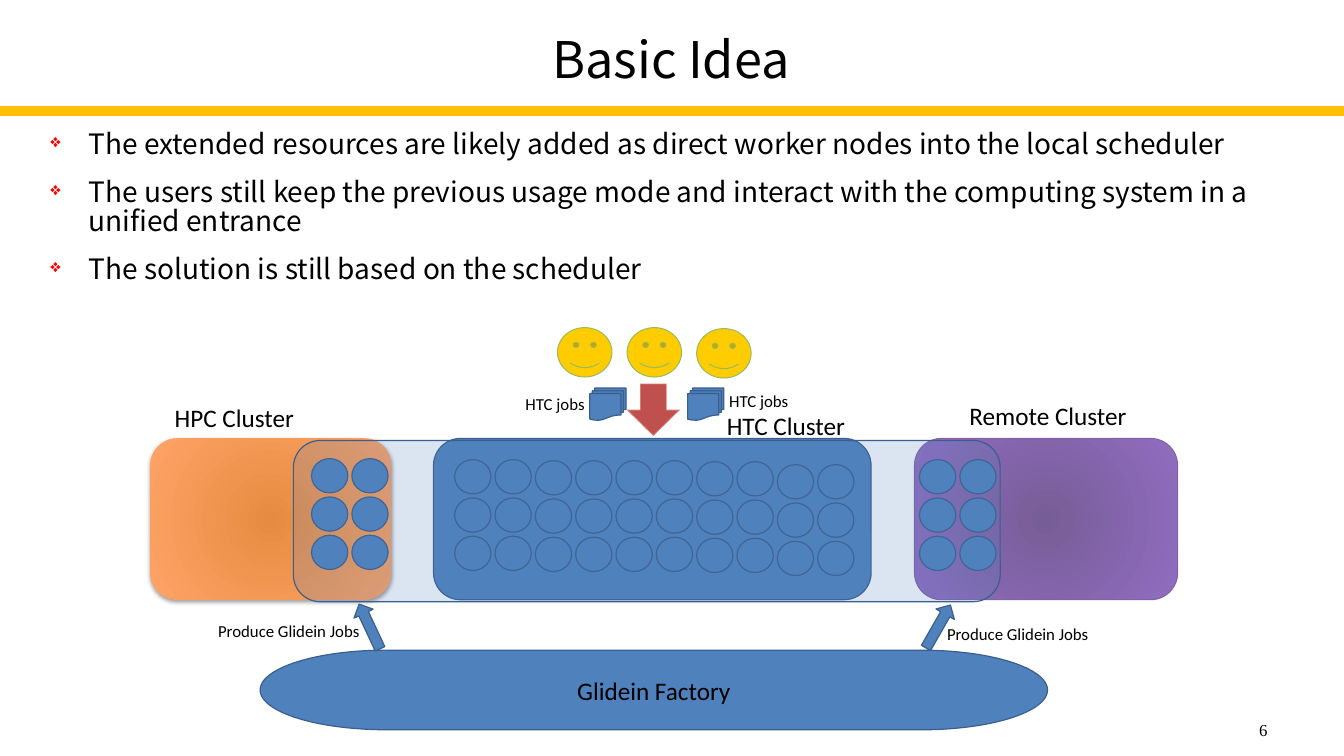
"""Builds the Basic Idea slide on extending a local cluster with glidein jobs."""
import dataclasses

import pptx
import pptx.dml.color
import pptx.enum.shapes
import pptx.enum.text
import pptx.oxml
import pptx.oxml.ns
import pptx.util

Inches = pptx.util.Inches
Pt = pptx.util.Pt
SHAPE = pptx.enum.shapes.MSO_SHAPE
ALIGN = pptx.enum.text.PP_ALIGN
ANCHOR = pptx.enum.text.MSO_ANCHOR


@dataclasses.dataclass(frozen=True)
class Theme:
    ink: str = "000000"
    rule: str = "FFC000"
    bullet: str = "FF0000"
    blue: str = "4F81BD"
    blue_edge: str = "3A5F8C"
    orange: tuple = ("E68C41", "FFA367")
    purple: tuple = ("775D97", "916DC1")
    purple_edge: str = "8064A2"
    face: str = "FFCC00"
    face_edge: str = "9BBB59"
    red: str = "C0504D"
    white: str = "FFFFFF"
    heading_font: str = "Noto Sans CJK SC"
    label_font: str = "Calibri"
    number_font: str = "Times New Roman"
    title_size: int = 36
    body_size: int = 20
    label_size: int = 18
    small_size: int = 12


def color(value):
    return pptx.dml.color.RGBColor.from_string(value)


def add_xml(parent, tag, **attributes):
    child = pptx.oxml.parse_xml(f"<a:{tag} {pptx.oxml.ns.nsdecls('a')}/>")
    for name, value in attributes.items():
        child.set(name, str(value))
    parent.append(child)
    return child


class Painter:
    def __init__(self, page, theme):
        self.page = page
        self.theme = theme

    def style(self, para, size, font, align):
        para.alignment = align
        para.font.size = Pt(size)
        para.font.name = font
        para.font.color.rgb = color(self.theme.ink)

    def text(self, area, words, size, font=None, align=ALIGN.CENTER, anchor=ANCHOR.MIDDLE):
        box = self.page.shapes.add_textbox(*map(Inches, area))
        box.text_frame.word_wrap = True
        box.text_frame.vertical_anchor = anchor
        box.text_frame.text = words
        for para in box.text_frame.paragraphs:
            self.style(para, size, font or self.theme.label_font, align)
        return box

    def bullets(self, area, lines):
        box = self.text(area, "\n".join(lines), self.theme.body_size,
                        self.theme.heading_font, ALIGN.LEFT, ANCHOR.TOP)
        for para in box.text_frame.paragraphs:
            para.space_before = Pt(14.4)
            para.line_spacing = 0.84
            properties = para._p.get_or_add_pPr()
            properties.set("marL", str(Inches(0.38)))
            properties.set("indent", str(Inches(-0.38)))
            defaults = properties.find(pptx.oxml.ns.qn("a:defRPr"))
            add_xml(add_xml(properties, "buClr"), "srgbClr", val=self.theme.bullet)
            add_xml(properties, "buSzPct", val=65000)
            add_xml(properties, "buChar", char="❖")
            properties.append(defaults)

    def shape(self, kind, area, fill=None, edge=None, width=0.85, turn=0):
        shape = self.page.shapes.add_shape(kind, *map(Inches, area))
        shape.shadow.inherit = False
        shape.rotation = turn
        shape.fill.solid()
        shape.fill.fore_color.rgb = color(fill or self.theme.blue)
        shape.line.color.rgb = color(edge or self.theme.blue_edge)
        shape.line.width = Pt(width)
        return shape

    def fade(self, paint, percent):
        paint_color = paint._xPr.find(".//" + pptx.oxml.ns.qn("a:srgbClr"))
        add_xml(paint_color, "alpha", val=percent * 1000)

    def glow(self, shape, colors):
        shape.fill.gradient()
        for stop, position, value in zip(shape.fill.gradient_stops, (0, 1), colors):
            stop.position = position
            stop.color.rgb = color(value)
        gradient = shape._element.spPr.find(pptx.oxml.ns.qn("a:gradFill"))
        gradient.remove(gradient.find(pptx.oxml.ns.qn("a:lin")))
        center = dict.fromkeys("ltrb", 50000)
        add_xml(add_xml(gradient, "path", path="circle"), "fillToRect", **center)

    def drop_shadow(self, shape):
        effects = shape._element.spPr.find(pptx.oxml.ns.qn("a:effectLst"))
        shadow = add_xml(effects, "outerShdw", blurRad=Pt(3.5), dist=Pt(1.7),
                         dir=90 * 60000, rotWithShape=0)
        add_xml(add_xml(shadow, "srgbClr", val=self.theme.ink), "alpha", val=40000)

    def rule(self, left, right, top):
        line = self.page.shapes.add_connector(
            pptx.enum.shapes.MSO_CONNECTOR.STRAIGHT,
            *map(Inches, (left, top, right, top)))
        line.line.color.rgb = color(self.theme.rule)
        line.line.width = Pt(7)
        add_xml(line._element.spPr, "effectLst")

    def nodes(self, left, top):
        for column in range(2):
            for row in range(3):
                self.shape(SHAPE.OVAL, (left + 0.4 * column, top + 0.38 * row, 0.36, 0.34))


def draw_header(painter):
    theme = painter.theme
    painter.rule(0, 13.33, 1.1)
    painter.text((0.4, 0.26, 12.51, 0.63), "Basic Idea", theme.title_size, theme.heading_font)
    painter.bullets((0.4, 1.26, 12.51, 5.47), (
        "The extended resources are likely added as direct worker nodes into the local scheduler",
        "The users still keep the previous usage mode and interact with the computing system"
        " in a unified entrance",
        "The solution is still based on the scheduler"))
    painter.text((9.56, 6.89, 3.11, 0.5), "6", theme.small_size, theme.number_font,
                 ALIGN.RIGHT, ANCHOR.BOTTOM)


def draw_clusters(painter):
    theme = painter.theme
    hpc = painter.shape(SHAPE.ROUNDED_RECTANGLE, (1.49, 4.35, 2.39, 1.6))
    hpc.line.fill.background()
    painter.glow(hpc, theme.orange)
    painter.drop_shadow(hpc)
    painter.shape(SHAPE.ROUNDED_RECTANGLE, (4.3, 4.35, 4.34, 1.6))
    remote = painter.shape(SHAPE.ROUNDED_RECTANGLE, (9.07, 4.35, 2.61, 1.6),
                           edge=theme.purple_edge, width=0.75)
    painter.glow(remote, theme.purple)
    painter.nodes(3.09, 4.55)
    for index, top in enumerate((4.56, 4.57, 4.57, 4.58, 4.61)):
        painter.nodes(4.51 + 0.8 * index, top)
    painter.nodes(9.12, 4.56)
    pool = painter.shape(SHAPE.ROUNDED_RECTANGLE, (2.91, 4.37, 7.01, 1.6))
    painter.fade(pool.fill, 20)
    for words, left, top, width in (("HPC Cluster", 1.44, 3.92, 1.77),
                                    ("Remote Cluster", 9.33, 3.9, 2.13),
                                    ("HTC Cluster", 6.91, 4, 1.77)):
        painter.text((left, top, width, 0.44), words, theme.label_size)


def draw_users(painter):
    theme = painter.theme
    for left, top in ((5.53, 3.25), (6.22, 3.25), (6.91, 3.26)):
        painter.shape(SHAPE.SMILEY_FACE, (left, top, 0.54, 0.49),
                      theme.face, theme.face_edge, 0.75)
    arrow = painter.shape(SHAPE.RIGHT_ARROW, (6.22, 3.8, 0.52, 0.53),
                          theme.red, theme.white, 1.2, 90)
    painter.fade(arrow.line.fill, 25)
    for jobs_left, label_left, label_top in ((5.85, 4.62, 3.79), (6.82, 6.64, 3.76)):
        painter.shape(SHAPE.FLOWCHART_MULTIDOCUMENT, (jobs_left, 3.85, 0.36, 0.32))
        painter.text((label_left, label_top, 1.77, 0.44), "HTC jobs", theme.small_size)


def draw_factory(painter):
    theme = painter.theme
    factory = painter.shape(SHAPE.FLOWCHART_TERMINATOR, (2.58, 6.45, 7.81, 0.79))
    factory.text_frame.text = "Glidein Factory"
    factory.text_frame.vertical_anchor = ANCHOR.MIDDLE
    painter.style(factory.text_frame.paragraphs[0], theme.label_size,
                  theme.label_font, ALIGN.CENTER)
    for left, turn, label_left, label_top in ((3.56, 154.9, 1.98, 6.04),
                                              (9.2, 209.7, 9.21, 6.07)):
        painter.shape(SHAPE.DOWN_ARROW, (left, 5.97, 0.21, 0.49), turn=turn)
        painter.text((label_left, label_top, 1.77, 0.44), "Produce Glidein Jobs",
                     theme.small_size)


def main():
    deck = pptx.Presentation()
    deck.slide_width = Inches(13.33)
    deck.slide_height = Inches(7.5)
    painter = Painter(deck.slides.add_slide(deck.slide_layouts[6]), Theme())
    draw_header(painter)
    draw_clusters(painter)
    draw_users(painter)
    draw_factory(painter)
    deck.save("out.pptx")


if __name__ == "__main__":
    main()
